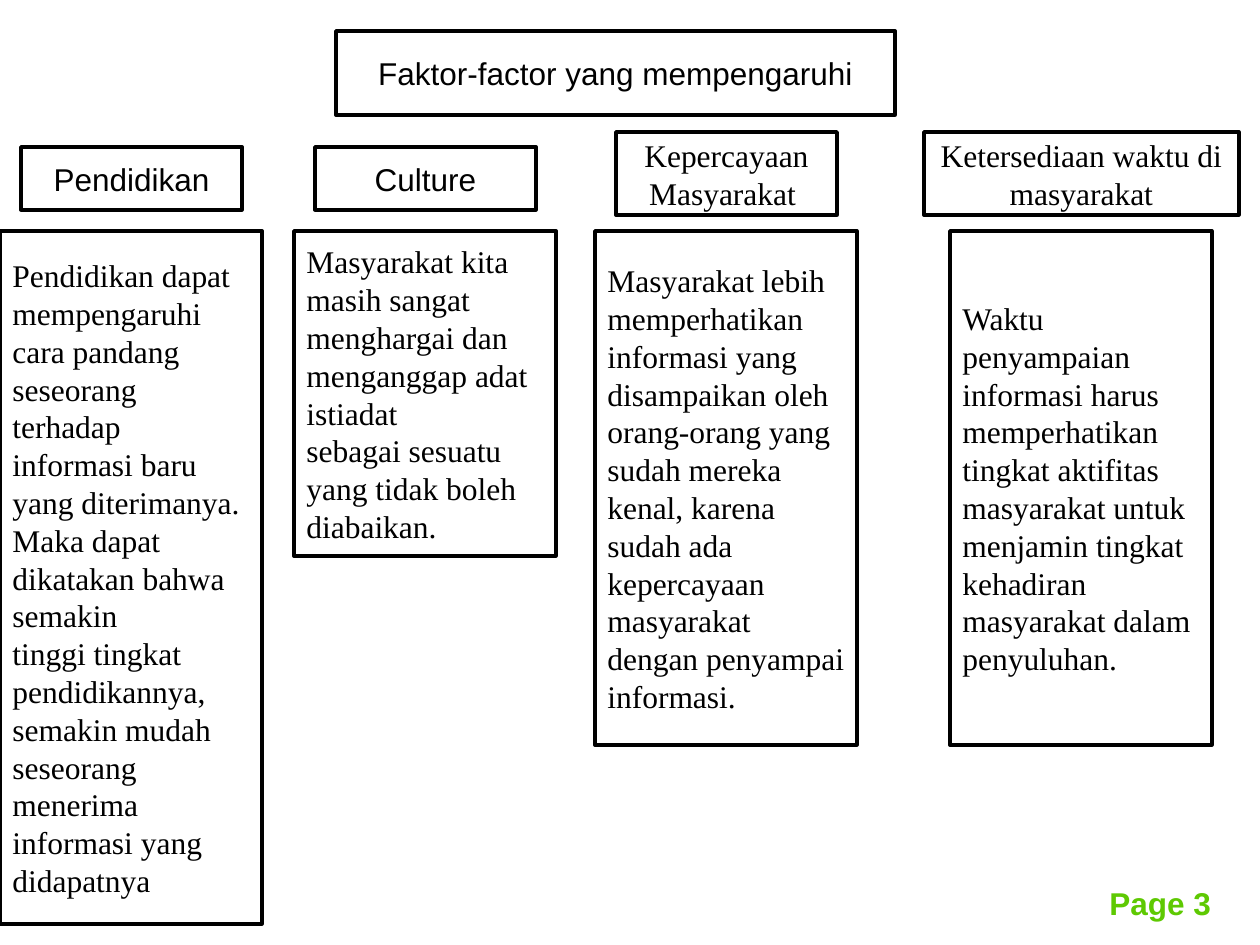
from pptx import Presentation, util as u
from pptx.dml.color import RGBColor
from pptx.enum import shapes, text

PX = 914400 // 126
SANS, SERIF = "Arial", "Times New Roman"
BODY_W, BODY_TOP = 262, 231

TITLE = "Faktor-factor yang mempengaruhi"
PAGE = "Page 3"

# Each factor: centre, head (text, font, top, width, height), body height, lines
FACTORS = [
    (131, ("Pendidikan", SANS, 147, 221, 63), 693, [
        "Pendidikan dapat mempengaruhi cara pandang seseorang terhadap",
        "informasi baru yang diterimanya. Maka dapat dikatakan bahwa semakin",
        "tinggi tingkat pendidikannya, semakin mudah seseorang menerima",
        "informasi yang didapatnya"]),
    (425, ("Culture", SANS, 147, 221, 63), 325, [
        "Masyarakat kita masih sangat menghargai dan menganggap adat istiadat",
        "sebagai sesuatu yang tidak boleh diabaikan."]),
    (726, ("Kepercayaan Masyarakat ", SERIF, 132, 221, 83), 514, [
        "Masyarakat lebih memperhatikan informasi yang disampaikan oleh",
        "orang-orang yang sudah mereka kenal, karena sudah ada kepercayaan",
        "masyarakat dengan penyampai informasi."]),
    (1081, ("Ketersediaan waktu di masyarakat", SERIF, 132, 315, 83), 514, [
        "Waktu penyampaian informasi harus memperhatikan tingkat aktifitas",
        "masyarakat untuk menjamin tingkat kehadiran masyarakat dalam",
        "penyuluhan."]),
]


def rgb(code):
    return RGBColor.from_string(code)


def write(shape, lines, font=SANS, color="000000", bold=False,
          align=text.PP_ALIGN.LEFT):
    frame = shape.text_frame
    frame.text = "\n".join(lines)
    for para in frame.paragraphs:
        para.alignment = align
        for run in para.runs:
            run.font.name, run.font.size = font, u.Pt(18)
            run.font.bold = bold
            run.font.color.rgb = rgb(color)


def box(left, top, width, height, lines, **style):
    shape = slide.shapes.add_shape(
        shapes.MSO_SHAPE.RECTANGLE,
        left * PX, top * PX, width * PX, height * PX)
    shape.shadow.inherit = False
    shape.fill.solid()
    shape.fill.fore_color.rgb = rgb("FFFFFF")
    shape.line.color.rgb = rgb("000000")
    shape.line.width = u.Pt(2)
    shape.text_frame.word_wrap = True
    shape.text_frame.vertical_anchor = text.MSO_ANCHOR.MIDDLE
    write(shape, lines, **style)


deck = Presentation()
deck.slide_width, deck.slide_height = 1260 * PX, 945 * PX
slide = deck.slides.add_slide(deck.slide_layouts[6])
MID = text.PP_ALIGN.CENTER

# Page number
page = slide.shapes.add_textbox(1097 * PX, 878 * PX, 147 * PX, 50 * PX)
page.text_frame.word_wrap = False
page.text_frame.auto_size = text.MSO_AUTO_SIZE.SHAPE_TO_FIT_TEXT
write(page, [PAGE], color="5EC902", bold=True)

# Title
box(336, 31, 559, 84, [TITLE], align=MID)

# Factors: head and body share a centre line
for centre, (head, font, top, width, height), tall, lines in FACTORS:
    box(centre - width // 2, top, width, height, [head], font=font, align=MID)
    box(centre - BODY_W // 2, BODY_TOP, BODY_W, tall, lines, font=SERIF)

deck.save("out.pptx")
